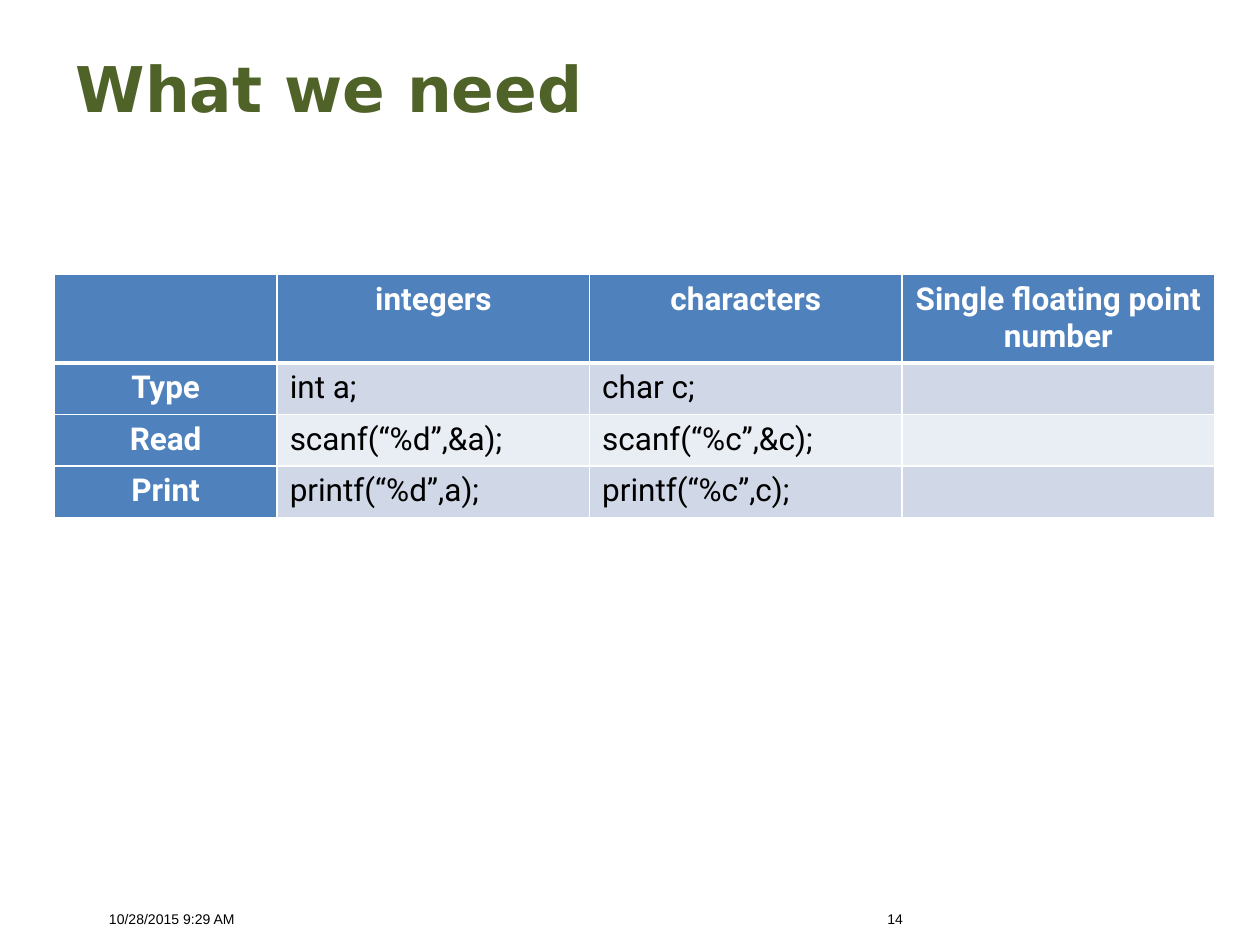
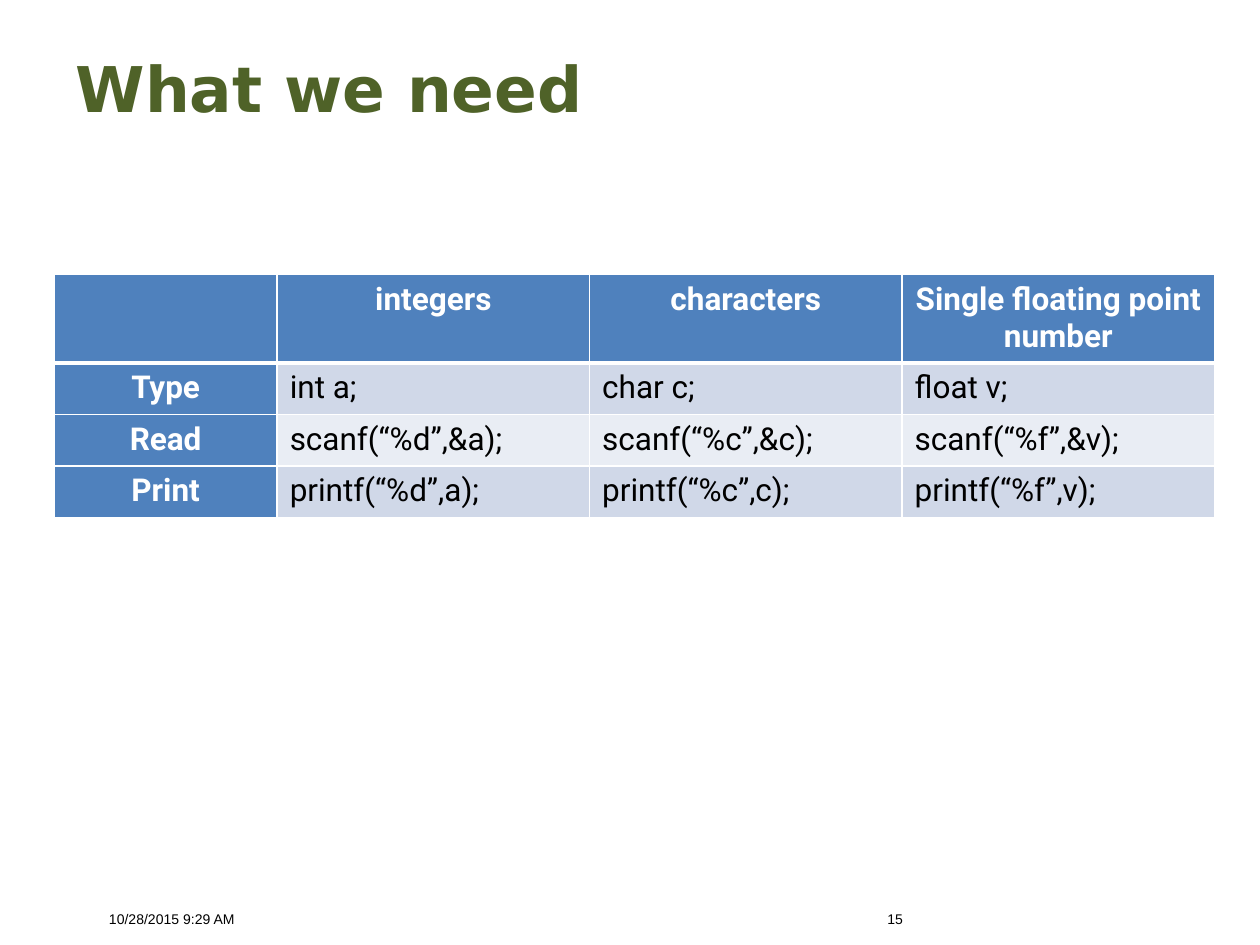
import lxml.etree
import pptx
import pptx.dml.color
import pptx.enum.text
import pptx.oxml.ns
import pptx.util

Inches, Pt = pptx.util.Inches, pptx.util.Pt
ALIGN = pptx.enum.text.PP_ALIGN
MIDDLE = pptx.enum.text.MSO_ANCHOR.MIDDLE

# Content
TITLE = "What we need"
DATE = "10/28/2015 9:29 AM"
FIRST_NUMBER = 14
HEADINGS = ["", "integers", "characters", "Single floating point number"]
KNOWN_ROWS = [
    ["Type", "int a;", "char c;"],
    ["Read", "scanf(“%d”,&a);", "scanf(“%c”,&c);"],
    ["Print", "printf(“%d”,a);", "printf(“%c”,c);"],
]
FLOAT_ANSWERS = [
    ["", "", ""],
    ["float v;", "scanf(“%f”,&v);", "printf(“%f”,v);"],
]

# Shared style
GREEN, BLUE, WHITE, BLACK = "4F6228", "4F81BD", "FFFFFF", "000000"
BANDS = ["D0D8E8", "E9EDF4"]
COLUMN_WIDTHS = [1.77, 2.48, 2.48, 2.48]
ROW_HEIGHTS = [0.69, 0.41, 0.41, 0.41]
FOOTER_LEFTS = {"date": 0.2, "number": 5.94}


def color(hex_code):
    return pptx.dml.color.RGBColor.from_string(hex_code)


def write(frame, text, font, size, ink, bold=False, align=ALIGN.LEFT):
    paragraph = frame.paragraphs[0]
    paragraph.alignment = align
    run = paragraph.add_run()
    run.text = text
    run.font.name = font
    run.font.size = Pt(size)
    run.font.bold = bold
    run.font.color.rgb = color(ink)


def add_title(slide):
    title = slide.shapes.title
    title.left, title.top = Inches(0.5), Inches(0.29)
    title.width, title.height = Inches(9), Inches(0.8)
    title.text_frame.vertical_anchor = MIDDLE
    write(title.text_frame, TITLE, "DejaVu Sans", 36, GREEN, bold=True)


def add_footer(slide, left, text):
    footer = slide.shapes.add_textbox(Inches(left), Inches(7.22), Inches(2.33), Inches(0.14))
    frame = footer.text_frame
    frame.word_wrap = True
    frame.vertical_anchor = MIDDLE
    frame.margin_left = frame.margin_right = frame.margin_top = frame.margin_bottom = 0
    write(frame, text, "Arial", 8, BLACK, align=ALIGN.CENTER)


def add_borders(cell, row):
    """White rules, with a thicker one under the heading row."""
    widths = {"lnL": 1, "lnR": 1, "lnT": 3 if row == 1 else 1, "lnB": 3 if row == 0 else 1}
    properties = cell._tc.get_or_add_tcPr()
    qn = pptx.oxml.ns.qn
    for side, width in widths.items():
        line = lxml.etree.SubElement(properties, qn("a:" + side), w=str(Pt(width)))
        fill = lxml.etree.SubElement(line, qn("a:solidFill"))
        lxml.etree.SubElement(fill, qn("a:srgbClr"), val=WHITE)


def add_type_table(slide, answers):
    rows = [HEADINGS] + [known + [answer] for known, answer in zip(KNOWN_ROWS, answers)]
    table = slide.shapes.add_table(
        len(rows), len(HEADINGS), Inches(0.43), Inches(2.18),
        Inches(sum(COLUMN_WIDTHS)), Inches(sum(ROW_HEIGHTS))).table
    table.first_col = True
    for column, width in zip(table.columns, COLUMN_WIDTHS):
        column.width = Inches(width)
    for row, height in zip(table.rows, ROW_HEIGHTS):
        row.height = Inches(height)

    for r, texts in enumerate(rows):
        for c, text in enumerate(texts):
            cell = table.cell(r, c)
            is_heading = r == 0 or c == 0
            add_borders(cell, r)
            cell.fill.solid()
            cell.fill.fore_color.rgb = color(BLUE if is_heading else BANDS[(r - 1) % 2])
            if text:
                write(cell.text_frame, text, "Roboto", 18,
                      WHITE if is_heading else BLACK, bold=is_heading,
                      align=ALIGN.CENTER if is_heading else ALIGN.LEFT)


def main():
    deck = pptx.Presentation()
    deck.slide_width, deck.slide_height = Inches(10), Inches(7.5)
    title_only = deck.slide_layouts[5]
    for number, answers in enumerate(FLOAT_ANSWERS, FIRST_NUMBER):
        slide = deck.slides.add_slide(title_only)
        add_title(slide)
        add_footer(slide, FOOTER_LEFTS["date"], DATE)
        add_footer(slide, FOOTER_LEFTS["number"], str(number))
        add_type_table(slide, answers)
    deck.save("out.pptx")


if __name__ == "__main__":
    main()
